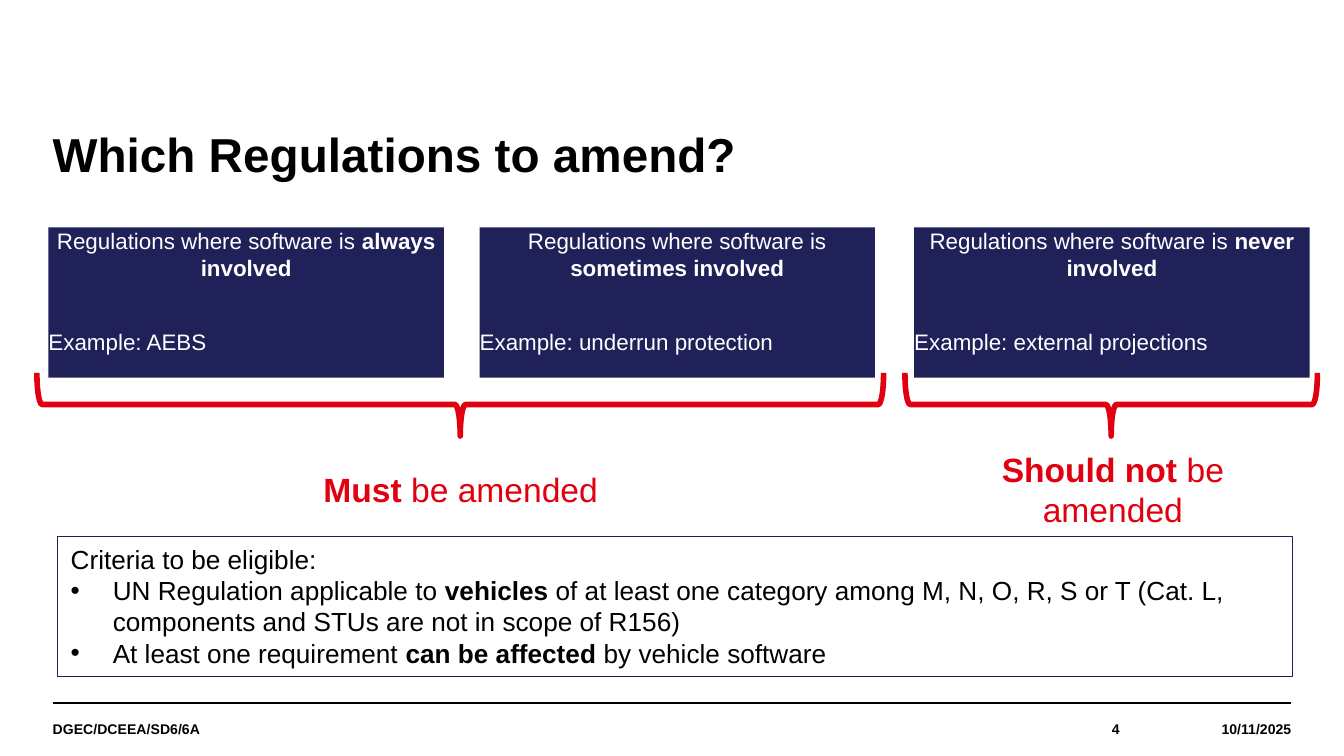
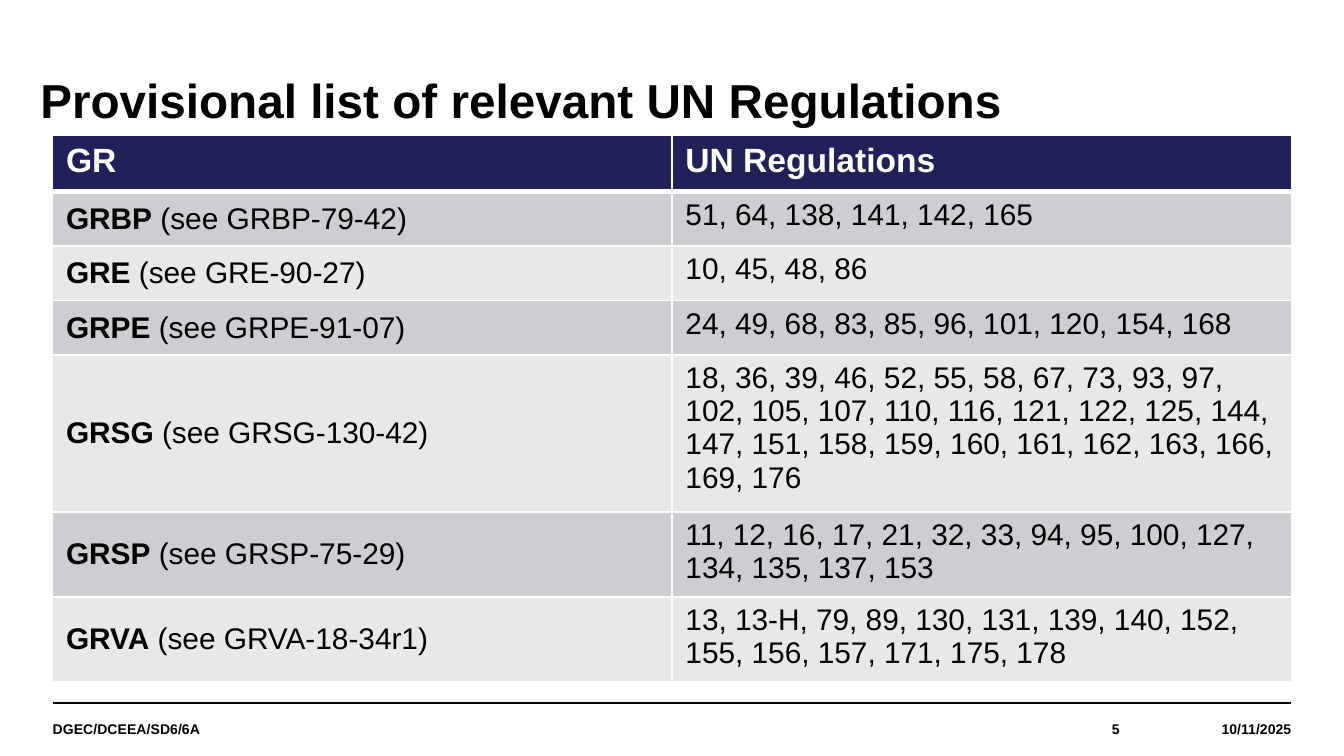
from dataclasses import dataclass
from typing import Any

from lxml.etree import SubElement
from pptx import Presentation
from pptx.dml.color import RGBColor
from pptx.enum.shapes import MSO_CONNECTOR as Connector, MSO_SHAPE as Preset
from pptx.enum.text import MSO_ANCHOR as Anchor, PP_ALIGN as Align
from pptx.oxml.ns import qn
from pptx.util import Pt

BLACK = RGBColor(0x00, 0x00, 0x00)
WHITE = RGBColor(0xFF, 0xFF, 0xFF)
NAVY = RGBColor(0x21, 0x21, 0x5A)
RED = RGBColor(0xE1, 0x00, 0x0F)
ROW_FILLS = (RGBColor(0xCD, 0xCD, 0xD2), RGBColor(0xE8, 0xE8, 0xEA))

FONT = "Arial"
LEFT, RIGHT = 28.2, 691.8
RULE_TOP = 376.6
FOOTER_HEIGHT = 28
GROUP_TOP, GROUP_WIDTH, GROUP_HEIGHT = 121.8, 211.8, 80.5
BULLET_INDENT = 22.5


@dataclass(frozen=True)
class Area:
    left: float
    top: float
    width: float
    height: float

    def lengths(self) -> tuple:
        return Pt(self.left), Pt(self.top), Pt(self.width), Pt(self.height)


@dataclass(frozen=True)
class Line:
    text: str
    size: float
    color: RGBColor = BLACK
    align: Any = Align.LEFT
    after: float = 0
    spacing: float = 1.0
    bullet: bool = False


@dataclass(frozen=True)
class Group:
    left: float
    title: str
    example: str


@dataclass(frozen=True)
class Verdict:
    brace: Area
    label: Area
    text: str


GROUPS = (
    Group(26, "Regulations where software is **always involved**", "Example: AEBS"),
    Group(257, "Regulations where software is **sometimes involved**", "Example: underrun protection"),
    Group(489.8, "Regulations where software is **never involved**", "Example: external projections"),
)
VERDICTS = (
    Verdict(Area(19.8, 199.8, 453.6, 33.8), Area(153.2, 247.8, 187.2, 29), "**Must** be amended"),
    Verdict(Area(484.8, 199.8, 221, 33.8), Area(502.6, 237, 187.2, 51), "**Should not** be amended"),
)
CRITERIA = (
    Line("Criteria to be eligible:", 14),
    Line("UN Regulation applicable to **vehicles** of at least one category among M, N, O, R, S or T "
         "(Cat. L, components and STUs are not in scope of R156)", 14, bullet=True),
    Line("At least one requirement **can be affected** by vehicle software", 14, bullet=True),
)
REGULATIONS = (
    ("**GR**", "**UN Regulations**"),
    ("**GRBP** (see GRBP-79-42)", "51, 64, 138, 141, 142, 165"),
    ("**GRE** (see GRE-90-27)", "10, 45, 48, 86"),
    ("**GRPE** (see GRPE-91-07)", "24, 49, 68, 83, 85, 96, 101, 120, 154, 168"),
    ("**GRSG** (see GRSG-130-42)",
     "18, 36, 39, 46, 52, 55, 58, 67, 73, 93, 97, 102, 105, 107, 110, 116, 121, 122, 125, 144, "
     "147, 151, 158, 159, 160, 161, 162, 163, 166, 169, 176"),
    ("**GRSP** (see GRSP-75-29)", "11, 12, 16, 17, 21, 32, 33, 94, 95, 100, 127, 134, 135, 137, 153"),
    ("**GRVA** (see GRVA-18-34r1)",
     "13, 13-H, 79, 89, 130, 131, 139, 140, 152, 155, 156, 157, 171, 175, 178"),
)


def assign(target: Any, values: dict) -> None:
    for name, value in values.items():
        setattr(target, name, value)


def add_bullet(para: Any) -> None:
    properties = para._p.get_or_add_pPr()
    properties.set("marL", str(Pt(BULLET_INDENT)))
    properties.set("indent", str(-Pt(BULLET_INDENT)))
    SubElement(properties, qn("a:buFont"), typeface=FONT)
    SubElement(properties, qn("a:buChar"), char="•")


def write(frame: Any, lines: tuple, anchor: Any = Anchor.TOP) -> None:
    assign(frame, {"word_wrap": True, "vertical_anchor": anchor})
    for index, line in enumerate(lines):
        para = frame.add_paragraph() if index else frame.paragraphs[0]
        if line.bullet:
            add_bullet(para)
        assign(para, {"alignment": line.align, "line_spacing": line.spacing,
                      "space_before": Pt(0), "space_after": Pt(line.after)})
        for position, text in enumerate(line.text.split("**")):
            if text:
                span = para.add_run()
                span.text = text
                assign(span.font, {"name": FONT, "size": Pt(line.size), "bold": position % 2 == 1})
                span.font.color.rgb = line.color


def clear_margins(frame: Any) -> None:
    assign(frame, dict.fromkeys(("margin_left", "margin_top", "margin_right", "margin_bottom"), 0))


def add_text(page: Any, area: Area, line: Line, anchor: Any = Anchor.TOP, inset: bool = False) -> None:
    frame = page.shapes.add_textbox(*area.lengths()).text_frame
    if not inset:
        clear_margins(frame)
    write(frame, (line,), anchor)


def add_box(page: Any, preset: Any, area: Area, fill: RGBColor | None = None,
            outline: RGBColor | None = None, weight: float = 0.75) -> Any:
    box = page.shapes.add_shape(preset, *area.lengths())
    box.shadow.inherit = False
    if fill is None:
        box.fill.background()
    else:
        box.fill.solid()
        box.fill.fore_color.rgb = fill
    if outline is None:
        box.line.fill.background()
    else:
        box.line.color.rgb = outline
        box.line.width = Pt(weight)
    return box


def add_brace(page: Any, area: Area) -> None:
    shift = (area.width - area.height) / 2
    upright = Area(area.left + shift, area.top - shift, area.height, area.width)
    add_box(page, Preset.LEFT_BRACE, upright, outline=RED, weight=3).rotation = 270


def add_page(deck: Any, number: int, title: str, left: float, top: float) -> Any:
    page = deck.slides.add_slide(deck.slide_layouts[6])
    rule = page.shapes.add_connector(Connector.STRAIGHT, Pt(LEFT), Pt(RULE_TOP), Pt(RIGHT), Pt(RULE_TOP))
    rule.line.color.rgb = BLACK
    rule.line.width = Pt(0.8)
    SubElement(rule._element.spPr, qn("a:effectLst"))
    add_text(page, Area(left, top, RIGHT - LEFT, 57), Line(f"**{title}**", 25.5, spacing=0.9))
    for text, start, end, align in (
        ("DGEC/DCEEA/SD6/6A", LEFT, 493.2, Align.LEFT),
        (str(number), 493.2, 599.8, Align.RIGHT),
        ("10/11/2025", 599.8, RIGHT, Align.RIGHT),
    ):
        area = Area(start, RULE_TOP, end - start, FOOTER_HEIGHT)
        add_text(page, area, Line(f"**{text}**", 7.5, align=align), Anchor.MIDDLE)
    return page


def add_border(cell: Any, side: str, weight: float) -> None:
    border = SubElement(cell._tc.get_or_add_tcPr(), qn(f"a:{side}"), w=str(Pt(weight)))
    SubElement(SubElement(border, qn("a:solidFill")), qn("a:srgbClr"), val=str(WHITE))


def add_regulation_table(page: Any) -> None:
    area = Area(LEFT, 72.4, RIGHT - LEFT, 207.5)
    table = page.shapes.add_table(len(REGULATIONS), 2, *area.lengths()).table
    for row, texts in enumerate(REGULATIONS):
        header = row == 0
        table.rows[row].height = Pt(30.2 if header else 29.2)
        for column, text in enumerate(texts):
            cell = table.cell(row, column)
            for side, weight in (("lnL", 1), ("lnR", 1), ("lnT", 3 if row == 1 else 1),
                                 ("lnB", 3 if header else 1)):
                add_border(cell, side, weight)
            cell.fill.solid()
            cell.fill.fore_color.rgb = NAVY if header else ROW_FILLS[(row - 1) % 2]
            line = Line(text, 18, WHITE) if header else Line(text, 16)
            write(cell.text_frame, (line,))
            cell.vertical_anchor = Anchor.TOP if header or column else Anchor.MIDDLE


def build_amend_page(deck: Any) -> None:
    page = add_page(deck, 4, "Which Regulations to amend?", LEFT, 70.6)
    for group in GROUPS:
        area = Area(group.left, GROUP_TOP, GROUP_WIDTH, GROUP_HEIGHT)
        frame = add_box(page, Preset.RECTANGLE, area, fill=NAVY).text_frame
        clear_margins(frame)
        write(frame, (Line(group.title, 12, WHITE, Align.CENTER, after=25),
                      Line(group.example, 12, WHITE, after=5)))
    for verdict in VERDICTS:
        add_brace(page, verdict.brace)
        add_text(page, verdict.label, Line(verdict.text, 18, RED, Align.CENTER), inset=True)
    criteria = add_box(page, Preset.RECTANGLE, Area(30.8, 287.4, 661.7, 75), outline=NAVY)
    write(criteria.text_frame, CRITERIA)


def build_list_page(deck: Any) -> None:
    page = add_page(deck, 5, "Provisional list of relevant UN Regulations", 21.6, 41.4)
    add_regulation_table(page)


def main() -> None:
    deck = Presentation()
    assign(deck, {"slide_width": Pt(720), "slide_height": Pt(405)})
    build_amend_page(deck)
    build_list_page(deck)
    deck.save("out.pptx")


if __name__ == "__main__":
    main()
